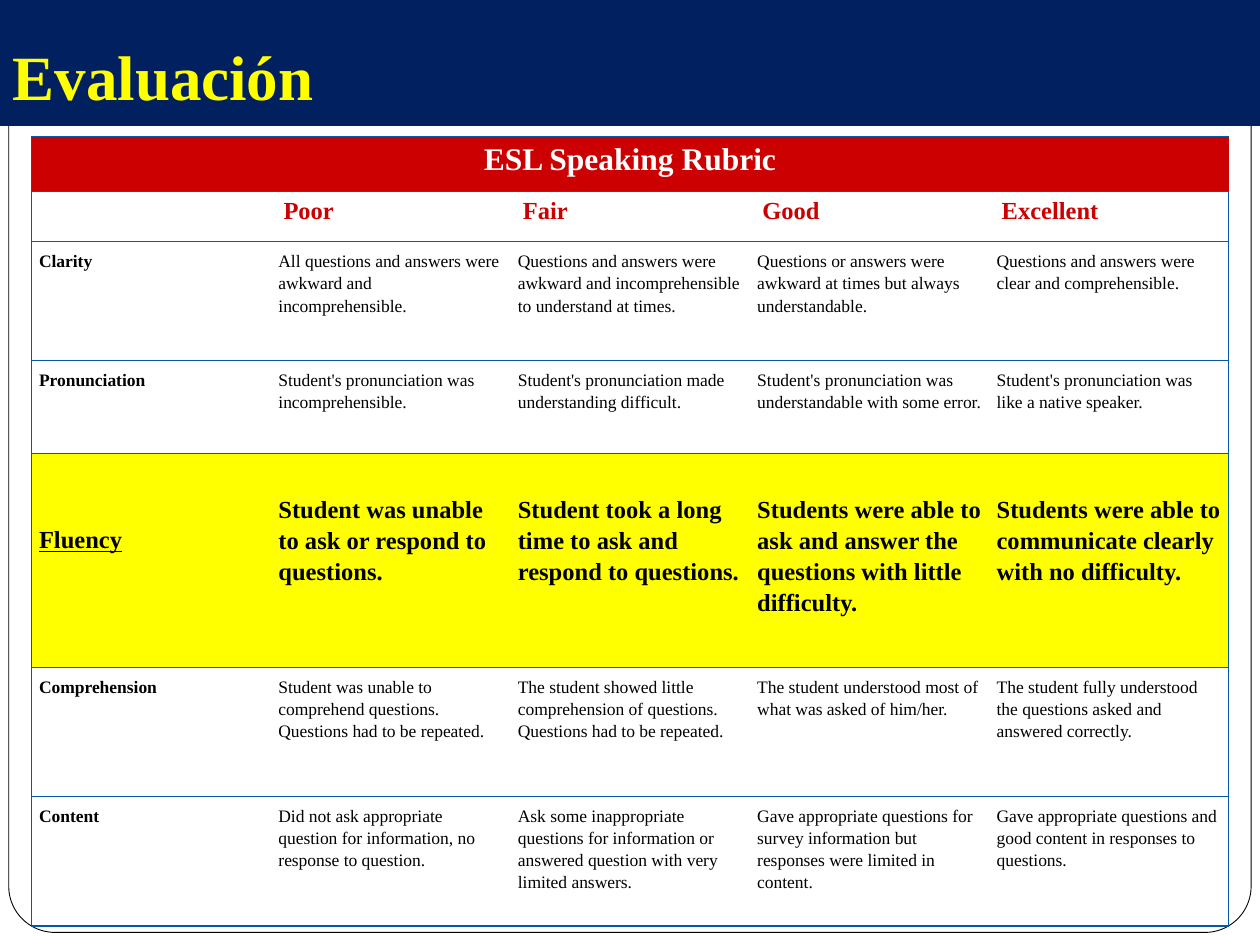
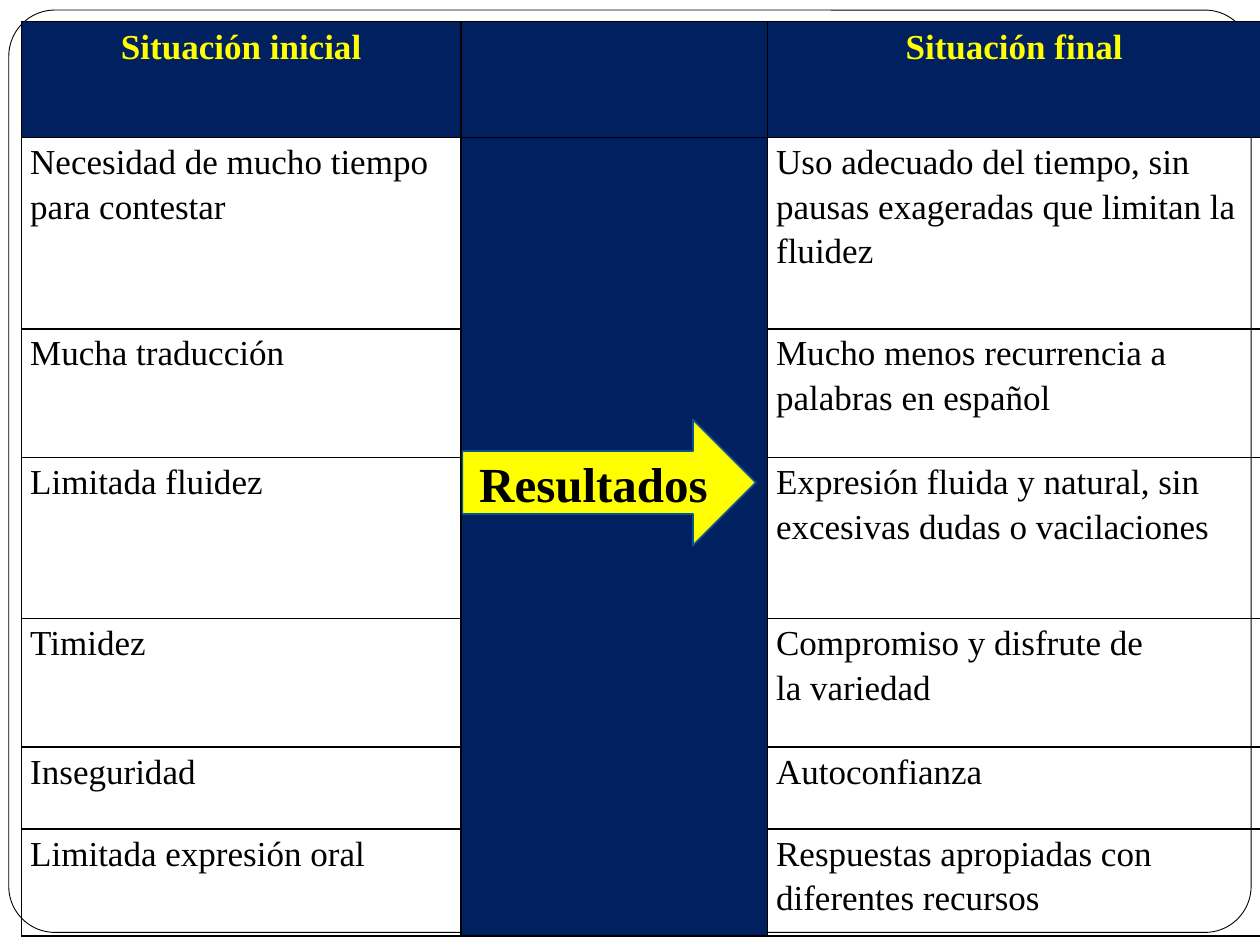
from dataclasses import dataclass

from lxml.etree import SubElement as Sub
from pptx import Presentation
from pptx.dml.color import RGBColor as Rgb
from pptx.enum.shapes import MSO_SHAPE as Shape
from pptx.enum.text import MSO_ANCHOR as Anchor, PP_ALIGN as Align
from pptx.oxml import parse_xml as parse
from pptx.oxml.ns import nsdecls, qn
from pptx.util import Pt

PX = 9144  # one px is a hundredth of an inch


@dataclass(frozen=True)
class Theme:
    face: str = "Times New Roman"
    navy: str = "002060"
    yellow: str = "FFFF00"
    red: str = "CC0000"
    white: str = "FFFFFF"
    black: str = "000000"
    blue: str = "0559A6"
    edge: str = "0B5292"
    title: int = 36
    label: int = 28
    large: int = 20
    head: int = 18
    mid: int = 14
    small: int = 10


T = Theme()

# Text and cell formats
TITLE = dict(size=T.title, color=T.yellow, bold=True)
LABEL = dict(size=T.label, color=T.black, bold=True, align=Align.CENTER)
INSET = dict(left=6, top=6, right=6, bottom=6)
BANNER = dict(size=T.head, color=T.white, bold=True, align=Align.CENTER, fill=T.red)
GRADE = dict(size=T.mid, color=T.red, bold=True)
NOTE = dict(size=T.small, color=T.black, bold=False, space=1.15, inset=INSET)
SKILL = NOTE | dict(bold=True)
FOCUS = SKILL | dict(size=T.mid, fill=T.yellow, inset=INSET | dict(top=31))
FOCUS_SKILL = FOCUS | dict(underline=True, inset=INSET | dict(top=55))
TOP = dict(size=T.large, color=T.yellow, bold=True, align=Align.CENTER, fill=T.navy)
BODY = dict(size=T.large, color=T.black, bold=False, space=1.15,
            inset=dict(left=7, top=0, right=7, bottom=0))
BAND = dict(size=T.large, color=T.navy, fill=T.navy)


class Deck:
    def __init__(self, wide, high):
        self.prs = Presentation()
        self.prs.slide_width, self.prs.slide_height = wide * PX, high * PX
        self.slide = None

    def page(self, layout):
        """Start a slide with the rounded frame at the back."""
        self.slide = self.prs.slides.add_slide(self.prs.slide_layouts[layout])
        frame = self.shape(Shape.ROUNDED_RECTANGLE, (7, 8, 986, 732),
                           T.white, T.black, 0.5)
        frame.adjustments[0] = 0.05
        frame.element.getparent().insert(2, frame.element)

    def paint(self, item, color):
        if color:
            item.fill.solid()
            item.fill.fore_color.rgb = Rgb.from_string(color)
        else:
            item.fill.background()

    def shape(self, kind, box, fill, line, width):
        item = self.slide.shapes.add_shape(kind, *(n * PX for n in box))
        item.shadow.inherit = False
        self.paint(item, fill)
        item.line.color.rgb = Rgb.from_string(line)
        item.line.width = Pt(width)
        return item

    def text(self, frame, words, style):
        frame.text = words
        frame.word_wrap = True
        for para in frame.paragraphs:
            para.alignment = style.get("align", Align.LEFT)
            if "space" in style:
                para.line_spacing = style["space"]
            font = para.font if not para.runs else para.runs[0].font
            font.name, font.size = T.face, Pt(style["size"])
            font.color.rgb = Rgb.from_string(style["color"])
            for key in ("bold", "underline"):
                if key in style:
                    setattr(font, key, style[key])

    def title(self, words, box, style):
        item = self.slide.shapes.title
        for key, val in zip(("left", "top", "width", "height"), box):
            setattr(item, key, val * PX)
        self.paint(item, T.navy)
        frame = item.text_frame
        frame.vertical_anchor = Anchor.BOTTOM
        for key, val in dict(left=10, top=5, right=10, bottom=10).items():
            setattr(frame, "margin_" + key, val * PX)
        self.text(frame, words, style)

    def border(self, cell, sides, color, width):
        """Draw the given sides and clear the others."""
        props = cell._tc.get_or_add_tcPr()
        for spot, side in enumerate("LRTB"):
            line = parse(f'<a:ln{side} {nsdecls("a")} w="{Pt(width)}"/>')
            if side in sides:
                Sub(Sub(line, qn("a:solidFill")), qn("a:srgbClr")).set("val", color)
            else:
                Sub(line, qn("a:noFill"))
            props.insert(spot, line)

    def table(self, spot, cols, rows, texts, look, line, grid):
        """Fill a table; look(row, col) gives a cell's style."""
        box = (*spot, sum(cols), sum(rows))
        table = self.slide.shapes.add_table(
            len(rows), len(cols), *(n * PX for n in box)).table
        table.first_row = table.horz_banding = False
        for col, wide in zip(table.columns, cols):
            col.width = wide * PX
        for row, high in zip(table.rows, rows):
            row.height = high * PX
        last = len(cols) - 1
        for r, words in enumerate(texts):
            for c, word in enumerate(words):
                cell, style = table.cell(r, c), look(r, c)
                self.text(cell.text_frame, word, style)
                for key, val in style.get("inset", {}).items():
                    setattr(cell, "margin_" + key, val * PX)
                self.paint(cell, style.get("fill"))
                sides = "TB" + "L" * (grid or c == 0) + "R" * (grid or c == last)
                self.border(cell, sides, *line)
        return table


# Rubric wording
RUBRIC = [
    ["ESL Speaking Rubric", "", "", "", ""],
    ["", "Poor", "Fair", "Good", "Excellent"],
    ["Clarity",
     "All questions and answers were awkward and incomprehensible.",
     "Questions and answers were awkward and incomprehensible to understand at times.",
     "Questions or answers were awkward at times but always understandable.",
     "Questions and answers were clear and comprehensible."],
    ["Pronunciation",
     "Student's pronunciation was incomprehensible.",
     "Student's pronunciation made understanding difficult.",
     "Student's pronunciation was understandable with some error.",
     "Student's pronunciation was like a native speaker."],
    ["Fluency",
     "Student was unable to ask or respond to questions.",
     "Student took a long time to ask and respond to questions.",
     "Students were able to ask and answer the questions with little difficulty.",
     "Students were able to communicate clearly with no difficulty."],
    ["Comprehension",
     "Student was unable to comprehend questions. Questions had to be repeated.",
     "The student showed little comprehension of questions. "
     "Questions had to be repeated.",
     "The student understood most of what was asked of him/her.",
     "The student fully understood the questions asked and answered correctly."],
    ["Content",
     "Did not ask appropriate question for information, no response to question.",
     "Ask some inappropriate questions for information or answered question "
     "with very limited answers.",
     "Gave appropriate questions for survey information but responses were "
     "limited in content.",
     "Gave appropriate questions and good content in responses to questions."],
]

# Before and after
CHANGE = [
    ("Situación inicial", "Situación final"),
    ("Necesidad de mucho tiempo para contestar",
     "Uso adecuado del tiempo, sin pausas exageradas que limitan la fluidez"),
    ("Mucha traducción", "Mucho menos recurrencia a palabras en español"),
    ("Limitada fluidez",
     "Expresión fluida y natural, sin excesivas dudas o vacilaciones"),
    ("Timidez", "Compromiso y disfrute de\nla variedad"),
    ("Inseguridad", "Autoconfianza"),
    ("Limitada expresión oral", "Respuestas apropiadas con diferentes recursos"),
]


def rubric_look(row, col):
    if row < 2:
        return (BANNER, GRADE)[row]
    if RUBRIC[row][0] == "Fluency":
        return FOCUS if col else FOCUS_SKILL
    return NOTE if col else SKILL


def change_look(row, col):
    if row == 0:
        return TOP
    return BAND if col == 1 else BODY


def main():
    deck = Deck(1000, 750)

    # Slide 1: speaking rubric
    deck.page(5)
    deck.title("Evaluación", (0, 0, 1000, 100), TITLE)
    table = deck.table((25, 108), [190] * 5, [44, 40, 94, 74, 170, 102, 103],
                       RUBRIC, rubric_look, (T.blue, 0.75), grid=False)
    table.cell(0, 0).merge(table.cell(0, 4))

    # Slide 2: results
    deck.page(6)
    texts = [(start, "", end) for start, end in CHANGE]
    table = deck.table((17, 17), [349, 243, 392], [92, 152, 102, 128, 102, 65, 85],
                       texts, change_look, (T.black, 1), grid=True)
    table.cell(1, 1).merge(table.cell(6, 1))
    arrow = deck.shape(Shape.RIGHT_ARROW, (367, 333, 233, 100), T.yellow, T.edge, 1)
    arrow.text_frame.vertical_anchor = Anchor.MIDDLE
    deck.text(arrow.text_frame, "Resultados", LABEL)

    deck.prs.save("out.pptx")


if __name__ == "__main__":
    main()
